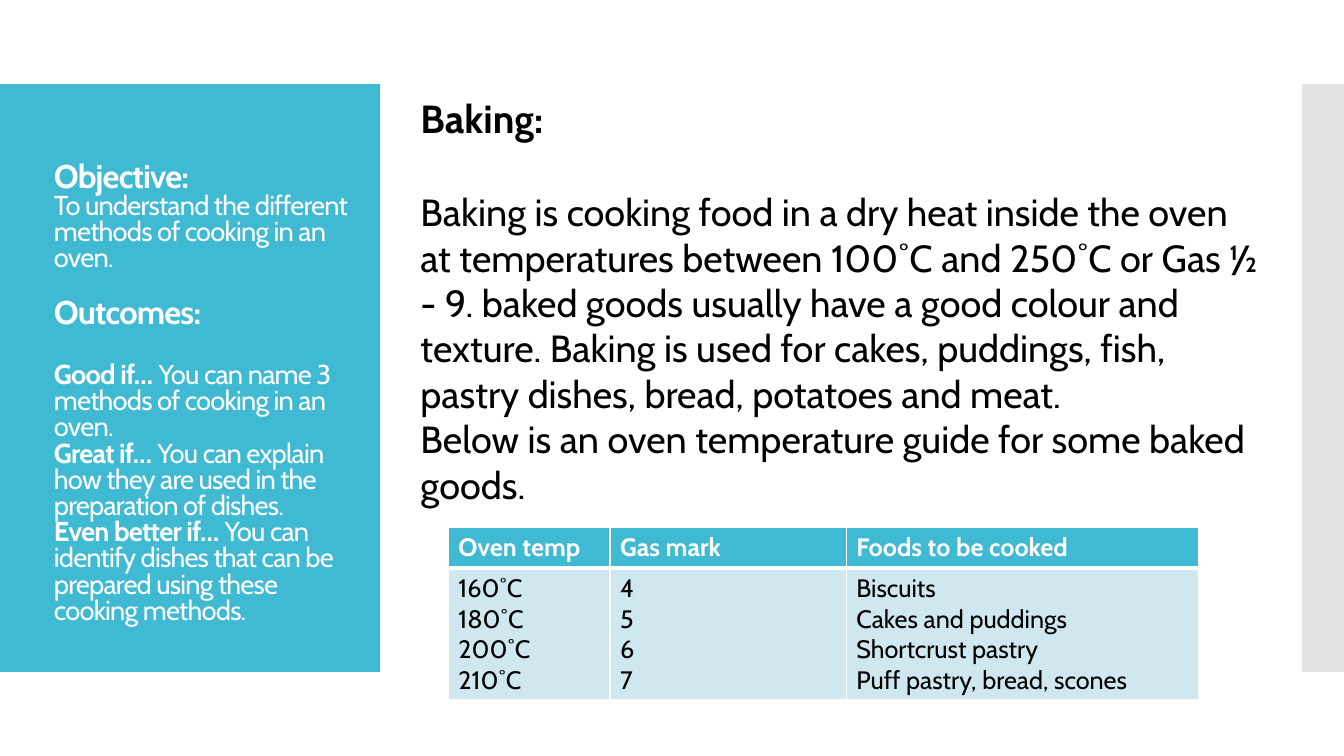
from dataclasses import dataclass
from lxml.etree import SubElement
from pptx import Presentation
from pptx.dml.color import RGBColor as Rgb
from pptx.enum.shapes import MSO_SHAPE as Shape
from pptx.enum.text import MSO_ANCHOR as Anchor, MSO_AUTO_SIZE as Fit
from pptx.oxml import parse_xml
from pptx.oxml.ns import nsdecls, qn
from pptx.util import Pt

PX = 9525


@dataclass(frozen=True)
class Theme:
    face: str = "Cabin"
    teal: str = "40BAD2"
    pale: str = "CFE7EE"
    grey: str = "C8C8C8"
    white: str = "FFFFFF"
    black: str = "000000"
    title: float = 28
    body: float = 27
    head: float = 23.4
    note: float = 19.5
    cell: float = 18
    track: int = -60


def apply(item, fmt):
    for key, val in fmt.items():
        setattr(item, key, val)


class Deck:
    """Draws styled elements on the current slide."""

    def __init__(self, theme, wide, high):
        self.theme = theme
        self.prs = Presentation()
        apply(self.prs, {"slide_width": wide * PX, "slide_height": high * PX})
        self.slide = self.prs.slides.add_slide(self.prs.slide_layouts[6])

    def block(self, box, color, alpha=None):
        shape = self.slide.shapes.add_shape(Shape.RECTANGLE, *(n * PX for n in box))
        shape.shadow.inherit = False
        shape.line.fill.background()
        shape.fill.solid()
        shape.fill.fore_color.rgb = Rgb.from_string(color)
        if alpha:
            tint = shape._element.spPr.find(qn("a:solidFill"))[0]
            SubElement(tint, qn("a:alpha")).set("val", str(alpha * 1000))

    def typeset(self, frame, paras, color, track=0):
        for i, (fmt, runs) in enumerate(paras):
            para = frame.add_paragraph() if i else frame.paragraphs[0]
            apply(para, fmt)
            for text, size, bold in runs:
                run = para.add_run()
                run.text = text
                apply(run.font, {"name": self.theme.face, "size": Pt(size), "bold": bold})
                run.font.color.rgb = Rgb.from_string(color)
                if track:
                    run._r.get_or_add_rPr().set("spc", str(track))

    def text(self, box, paras, color, fmt, track=0):
        frame = self.slide.shapes.add_textbox(*(n * PX for n in box)).text_frame
        apply(frame, {"word_wrap": True, **fmt})
        self.typeset(frame, paras, color, track)

    def edge(self, cell, sides):
        props = cell._tc.get_or_add_tcPr()
        for i, (side, width) in enumerate(sides.items()):
            props.insert(i, parse_xml(
                f'<a:ln{side} {nsdecls("a")} w="{Pt(width)}"><a:solidFill>'
                f'<a:srgbClr val="{self.theme.white}"/></a:solidFill></a:ln{side}>'))

    def table(self, left, top, cols, rows, data):
        box = (left, top, sum(cols), sum(rows))
        grid = self.slide.shapes.add_table(
            len(rows), len(cols), *(n * PX for n in box)).table
        for col, wide in zip(grid.columns, cols):
            col.width = wide * PX
        looks = ((self.theme.teal, self.theme.white, True, {"L": 1, "R": 1, "T": 1, "B": 3}),
                 (self.theme.pale, self.theme.black, False, {"L": 1, "R": 1, "T": 3, "B": 1}))
        for r, (high, look) in enumerate(zip(rows, looks)):
            grid.rows[r].height = high * PX
            fill, ink, bold, sides = look
            for c, lines in enumerate(data[r]):
                cell = grid.cell(r, c)
                cell.fill.solid()
                cell.fill.fore_color.rgb = Rgb.from_string(fill)
                self.edge(cell, sides)
                self.typeset(cell.text_frame,
                             [({}, [(line, self.theme.cell, bold)]) for line in lines], ink)


def main():
    look = Theme()
    deck = Deck(look, 1280, 720)
    deck.block((0, 80, 362, 560), look.teal)
    deck.block((1240, 80, 40, 560), look.grey, alpha=50)

    deck.text((391, 85, 819, 417), [
        ({}, [("Baking:", look.title, True)]),
        ({"space_before": Pt(34)}, [(
            "Baking is cooking food in a dry heat inside the oven at temperatures "
            "between 100˚C and 250˚C or Gas ½ - 9. baked goods usually have a good "
            "colour and texture. Baking is used for cakes, puddings, fish, pastry "
            "dishes, bread, potatoes and meat.", look.body, False)]),
        ({}, [("Below is an oven temperature guide for some baked goods.",
               look.body, False)]),
    ], look.black, {"auto_size": Fit.SHAPE_TO_FIT_TEXT})

    tight = {"line_spacing": 0.8}
    goals = [
        (0, [("Objective:", look.head, True)]),
        (0, [("To understand the different methods of cooking in an oven.",
              look.note, False)]),
        (19, [("Outcomes:", look.head, True)]),
        (23, [("Good if… ", look.note, True),
              ("You can name 3 methods of cooking in an oven.", look.note, False)]),
        (0, [("Great if…", look.note, True),
             (" You can explain how they are used in the preparation of dishes.",
              look.note, False)]),
        (0, [("Even better if…", look.note, True),
             (" You can identify dishes that can be prepared using these cooking methods.",
              look.note, False)]),
    ]
    deck.text((42, 134, 309, 483),
              [({**tight, "space_before": Pt(gap)}, runs) for gap, runs in goals],
              look.white, {"vertical_anchor": Anchor.MIDDLE}, look.track)

    deck.table(427, 502, (154, 225, 336), (39, 125), (
        (["Oven temp"], ["Gas mark"], ["Foods to be cooked"]),
        (["160˚C", "180˚C", "200˚C", "210˚C"],
         ["4", "5", "6", "7"],
         ["Biscuits", "Cakes and puddings", "Shortcrust pastry",
          "Puff pastry, bread, scones"]),
    ))
    deck.prs.save("out.pptx")


if __name__ == "__main__":
    main()
